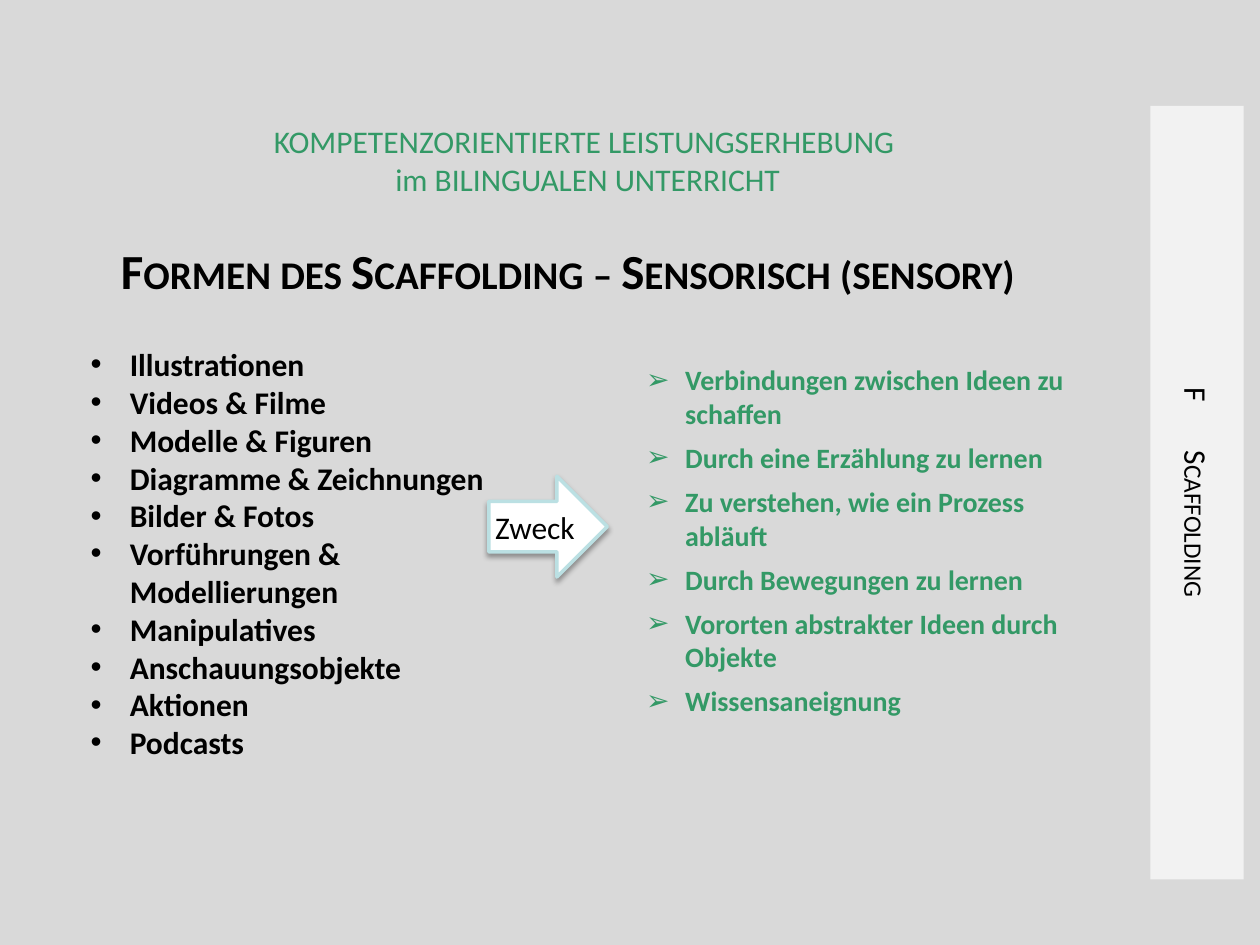
"""Build the slide on sensory forms of scaffolding."""
from dataclasses import dataclass

from lxml.etree import SubElement
from pptx import Presentation
from pptx.dml.color import RGBColor as RGB
from pptx.enum.shapes import MSO_SHAPE as SHAPE
from pptx.enum.text import MSO_ANCHOR as ANCHOR, MSO_AUTO_SIZE as AUTO, PP_ALIGN as ALIGN
from pptx.oxml.ns import qn
from pptx.util import Inches, Pt

COLORS = {
    "background": "D9D9D9",
    "sidebar": "F2F2F2",
    "text": "000000",
    "accent": "339966",
    "arrow": "FFFFFF",
    "arrow_line": "BBE0E3",
    "shadow": "000000",
}
FONT = "Calibri"
INDENT = 0.31


@dataclass(frozen=True)
class Box:
    left: float
    top: float
    width: float
    height: float

    def emu(self) -> tuple:
        return tuple(Inches(v) for v in (self.left, self.top, self.width, self.height))


@dataclass(frozen=True)
class BulletList:
    box: Box
    items: tuple
    bullet: str
    size: int
    color: str
    space_after: int = 0
    inset: float = 0.05


LISTS = (
    BulletList(
        Box(0.67, 2.69, 3.78, 3.43),
        ("Illustrationen", "Videos & Filme", "Modelle & Figuren",
         "Diagramme & Zeichnungen", "Bilder & Fotos", "Vorführungen & Modellierungen",
         "Manipulatives", "Anschauungsobjekte", "Aktionen", "Podcasts"),
        "•", 18, "text",
    ),
    BulletList(
        Box(5.03, 2.83, 3.82, 2.95),
        ("Verbindungen zwischen Ideen zu schaffen", "Durch eine Erzählung zu lernen",
         "Zu verstehen, wie ein Prozess abläuft", "Durch Bewegungen zu lernen",
         "Vororten abstrakter Ideen durch Objekte", "Wissensaneignung"),
        "➢", 16, "accent", space_after=6, inset=0.1,
    ),
)


def add_text(p, text: str, *, size=18, color="text", bold=False, small_caps=False) -> None:
    r = p.add_run()
    r.text = text
    r.font.name = FONT
    r.font.size = Pt(size)
    r.font.bold = bold
    r.font.color.rgb = RGB.from_string(COLORS[color])
    if small_caps:
        r._r.get_or_add_rPr().set("cap", "small")


def frame(sp, *, inset=0.05, anchor=ANCHOR.TOP):
    tf = sp.text_frame
    tf.word_wrap = True
    tf.auto_size = AUTO.NONE
    tf.vertical_anchor = anchor
    tf.margin_left = tf.margin_right = Inches(inset)
    tf.margin_top = tf.margin_bottom = Inches(0.05)
    return tf


def add_bullet(p, char: str) -> None:
    pPr = p._p.get_or_add_pPr()
    pPr.set("marL", str(Inches(INDENT)))
    pPr.set("indent", str(-Inches(INDENT)))
    SubElement(pPr, qn("a:buFont"), typeface="Arial")
    SubElement(pPr, qn("a:buChar"), char=char)


def add_list(s, spec_list: BulletList) -> None:
    tf = frame(s.shapes.add_textbox(*spec_list.box.emu()), inset=spec_list.inset)
    for i, item in enumerate(spec_list.items):
        p = tf.add_paragraph() if i else tf.paragraphs[0]
        p.space_after = Pt(spec_list.space_after)
        add_bullet(p, spec_list.bullet)
        add_text(p, item, size=spec_list.size, color=spec_list.color, bold=True)


def add_shape(s, kind: SHAPE, box: Box, fill: str):
    sp = s.shapes.add_shape(kind, *box.emu())
    sp.shadow.inherit = False
    sp.fill.solid()
    sp.fill.fore_color.rgb = RGB.from_string(COLORS[fill])
    sp.line.fill.background()
    return sp


def add_title(s) -> None:
    title = s.shapes.title
    title.left, title.top, title.width, title.height = Box(0.91, 1.86, 7.64, 0.57).emu()
    p = frame(title).paragraphs[0]
    p.alignment = ALIGN.LEFT
    add_text(p, "Formen des Scaffolding – Sensorisch (sensory)", size=28, bold=True, small_caps=True)


def add_header(s) -> None:
    p = frame(s.shapes.add_textbox(*Box(0.2, 0.92, 8.93, 0.71).emu())).paragraphs[0]
    p.alignment = ALIGN.CENTER
    add_text(p, "KOMPETENZORIENTIERTE LEISTUNGSERHEBUNG ", color="accent")
    p.add_line_break()
    add_text(p, "im BILINGUALEN UNTERRICHT", color="accent")


def add_sidebar(s) -> None:
    sp = add_shape(s, SHAPE.RECTANGLE, Box(9.13, 0.84, 0.74, 6.14), "sidebar")
    tf = frame(sp, anchor=ANCHOR.MIDDLE)
    tf._txBody.bodyPr.set("vert", "vert")
    p = tf.paragraphs[0]
    p.alignment = ALIGN.CENTER
    add_text(p, "F\t")
    add_text(p, "Scaffolding", small_caps=True)


def add_arrow(s) -> None:
    sp = add_shape(s, SHAPE.RIGHT_ARROW, Box(3.88, 3.78, 0.94, 0.8), "arrow")
    sp.line.color.rgb = RGB.from_string(COLORS["arrow_line"])
    sp.line.width = Pt(2)
    effects = sp._element.spPr.find(qn("a:effectLst"))
    shadow = SubElement(effects, qn("a:outerShdw"), blurRad=str(Pt(3)), dist=str(Pt(1.8)),
                        dir="5400000", rotWithShape="0")
    color = SubElement(shadow, qn("a:srgbClr"), val=COLORS["shadow"])
    SubElement(color, qn("a:alpha"), val="35000")
    p = frame(sp, anchor=ANCHOR.MIDDLE).paragraphs[0]
    p.alignment = ALIGN.LEFT
    add_text(p, "Zweck")


def main() -> None:
    prs = Presentation()
    prs.slide_width, prs.slide_height = Inches(10), Inches(7.5)
    s = prs.slides.add_slide(prs.slide_layouts[5])
    s.background.fill.solid()
    s.background.fill.fore_color.rgb = RGB.from_string(COLORS["background"])
    add_title(s)
    add_header(s)
    add_sidebar(s)
    forms, purposes = LISTS
    add_list(s, forms)
    add_arrow(s)
    add_list(s, purposes)
    prs.save("out.pptx")


if __name__ == "__main__":
    main()
